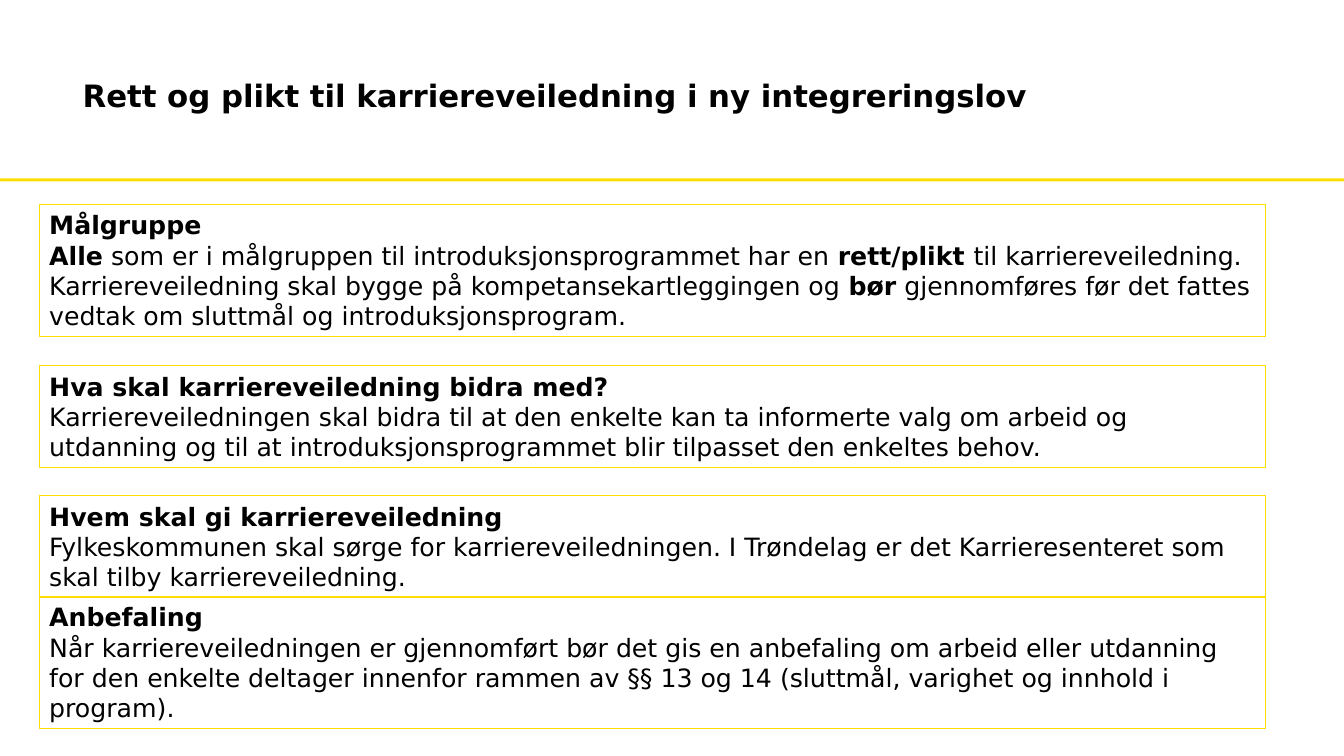
from dataclasses import dataclass

from pptx import Presentation
from pptx.dml.color import RGBColor
from pptx.enum.shapes import MSO_SHAPE
from pptx.enum.text import MSO_ANCHOR, MSO_AUTO_SIZE, PP_ALIGN
from pptx.util import Pt


@dataclass(frozen=True)
class Theme:
    font: str = "DejaVu Sans"
    text: RGBColor = RGBColor(0, 0, 0)
    accent: RGBColor = RGBColor(0xFF, 0xDD, 0)
    title_size: int = 22
    body_size: int = 18
    border: float = 0.75


TITLE = "Rett og plikt til karriereveiledning i ny integreringslov"
LEFT, WIDTH = 28.08, 876.24
SECTIONS = [
    (146.16, 94.32, "Målgruppe", [
        ("Alle", True),
        (" som er i målgruppen til introduksjonsprogrammet har en ", False),
        ("rett/plikt ", True),
        ("til karriereveiledning. Karriereveiledning skal bygge på "
         "kompetansekartleggingen og ", False),
        ("bør", True),
        (" gjennomføres før det fattes vedtak om sluttmål og "
         "introduksjonsprogram.", False)]),
    (261.36, 72.72, "Hva skal karriereveiledning bidra med?", [
        ("Karriereveiledningen skal bidra til at den enkelte kan ta "
         "informerte valg om arbeid og utdanning og til at "
         "introduksjonsprogrammet blir tilpasset den enkeltes behov.", False)]),
    (354.24, 72.72, "Hvem skal gi karriereveiledning", [
        ("Fylkeskommunen skal sørge for karriereveiledningen. I Trøndelag er "
         "det Karrieresenteret som skal tilby karriereveiledning.", False)]),
    (426.24, 94.32, "Anbefaling", [
        ("Når karriereveiledningen er gjennomført bør det gis en anbefaling "
         "om arbeid eller utdanning for den enkelte deltager innenfor rammen "
         "av §§ 13 og 14 (sluttmål, varighet og innhold i program).", False)]),
]


def set_format(target, values):
    for name, value in values.items():
        setattr(target, name, value)


class SlideBuilder:
    """Draws styled elements on the current slide."""

    def __init__(self, s, theme):
        self.s, self.theme = s, theme

    def add_runs(self, p, runs, size):
        p.alignment = PP_ALIGN.LEFT
        for text, bold in runs:
            r = p.add_run()
            r.text = text
            set_format(r.font, {"name": self.theme.font, "size": Pt(size), "bold": bold})
            r.font.color.rgb = self.theme.text

    def title(self, text, x, y, w, h):
        tf = self.s.shapes.add_textbox(Pt(x), Pt(y), Pt(w), Pt(h)).text_frame
        set_format(tf, {"word_wrap": True, "vertical_anchor": MSO_ANCHOR.MIDDLE,
                        "margin_left": 0, "margin_right": 0,
                        "margin_top": 0, "margin_bottom": 0})
        p = tf.paragraphs[0]
        p.line_spacing = 0.9
        self.add_runs(p, [(text, True)], self.theme.title_size)

    def rule(self, x, y, w, h):
        sp = self.s.shapes.add_shape(MSO_SHAPE.RECTANGLE, Pt(x), Pt(y), Pt(w), Pt(h))
        sp.shadow.inherit = False
        sp.fill.solid()
        sp.fill.fore_color.rgb = self.theme.accent
        sp.line.fill.background()

    def section(self, heading, runs, x, y, w, h):
        sp = self.s.shapes.add_textbox(Pt(x), Pt(y), Pt(w), Pt(h))
        sp.line.color.rgb = self.theme.accent
        sp.line.width = Pt(self.theme.border)
        tf = sp.text_frame
        set_format(tf, {"word_wrap": True,
                        "auto_size": MSO_AUTO_SIZE.SHAPE_TO_FIT_TEXT})
        self.add_runs(tf.paragraphs[0], [(heading, True)], self.theme.body_size)
        self.add_runs(tf.add_paragraph(), runs, self.theme.body_size)


def main():
    prs = Presentation()
    set_format(prs, {"slide_width": Pt(960), "slide_height": Pt(540)})
    s = prs.slides.add_slide(prs.slide_layouts[6])
    builder = SlideBuilder(s, Theme())
    builder.rule(0, 127.44, 960, 2.16)
    builder.title(TITLE, 59.04, 25.92, 756, 87.12)
    for top, height, heading, runs in SECTIONS:
        builder.section(heading, runs, LEFT, top, WIDTH, height)
    prs.save("out.pptx")


if __name__ == "__main__":
    main()
